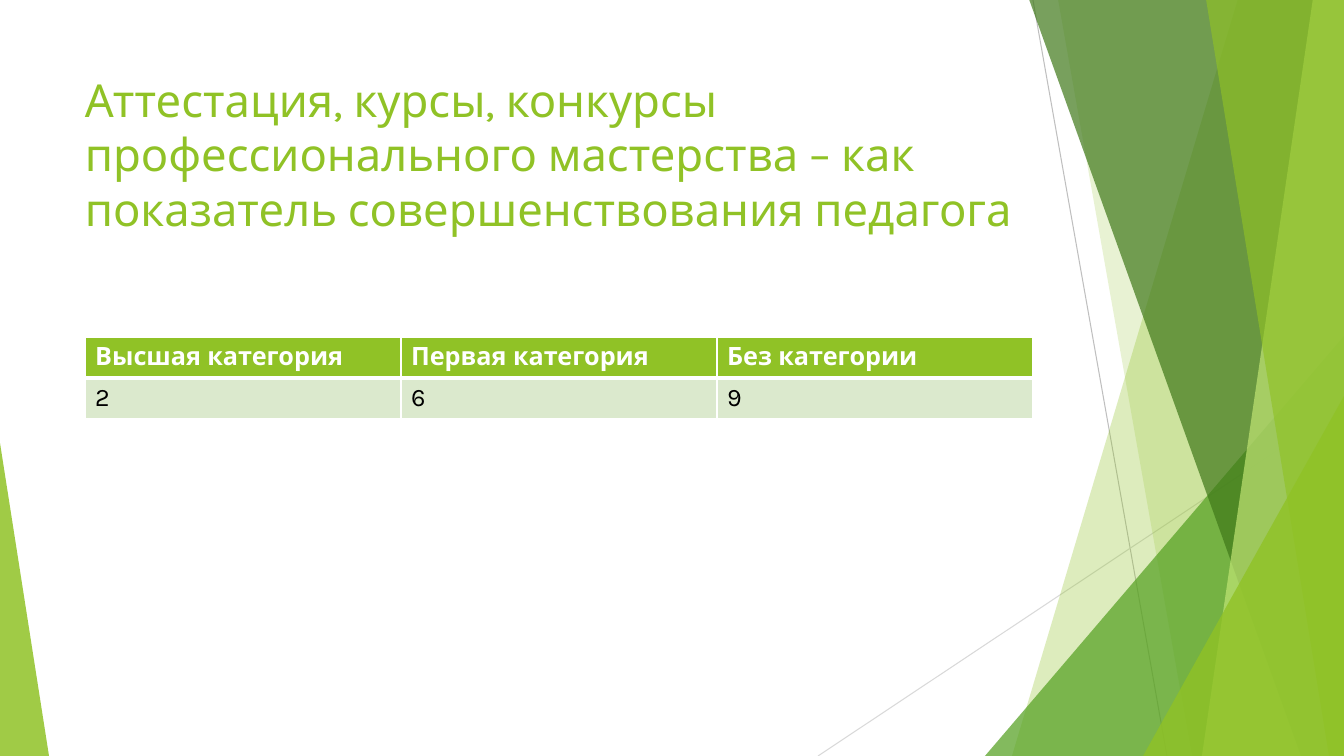
from lxml import etree
from pptx import Presentation
from pptx.dml.color import RGBColor
from pptx.enum.shapes import MSO_CONNECTOR, MSO_SHAPE
from pptx.enum.text import MSO_ANCHOR
from pptx.oxml.ns import qn
from pptx.util import Pt

PX = 9525 / 1.05  # 100.8 px to the inch
WIDTH, HEIGHT = 1344, 756
FONT = "Karla"
TRIANGLE = MSO_SHAPE.ISOSCELES_TRIANGLE
STRAIGHT = MSO_CONNECTOR.STRAIGHT
TOP, MIDDLE = MSO_ANCHOR.TOP, MSO_ANCHOR.MIDDLE
COLORS = {
    "lime": "90C226", "green": "54A021", "forest": "3F7819", "pale": "C0E474",
    "mint": "DBE9CD", "white": "FFFFFF", "black": "000000",
    "gray": "BFBFBF", "silver": "D9D9D9",
}


def emu(*lengths):
    return [round(length * PX) for length in lengths]


def style_run(run, size, color, bold=False):
    run.font.name = FONT
    run.font.size = Pt(size)
    run.font.bold = bold
    run.font.color.rgb = RGBColor.from_string(COLORS[color])


deck = Presentation()
deck.slide_width, deck.slide_height = emu(WIDTH, HEIGHT)
page = deck.slides.add_slide(deck.slide_layouts[6])
shapes = page.shapes

# Thin crossing lines
for x1, y1, x2, y2, color in [
    (1033, 0, 1167, HEIGHT, "gray"),
    (WIDTH, 406, 818, HEIGHT, "silver"),
]:
    line = shapes.add_connector(STRAIGHT, *emu(x1, y1, x2, y2))
    line.line.color.rgb = RGBColor.from_string(COLORS[color])
    line.line.width = Pt(0.75)
    etree.SubElement(line._element.spPr, qn("a:effectLst"))

# Translucent facets: bands (top x, bottom x) reach the right edge,
# triangles are (left, top, width, apex) and stand on the bottom edge
facets = [
    ((1238, 1012), "lime", 30),
    ((1058, 1192), "lime", 20),
    ((985, 336, 359, 1), "green", 72),
    ((1029, 1301), "forest", 70),
    ((1313, 1202), "pale", 70),
    ((1206, 1329), "lime", 65),
    ((1143, 396, 201, 1), "lime", 80),
    ((0, 443, 49, 0), "lime", 85),
]
for geometry, color, opacity in facets:
    if len(geometry) == 2:
        top_x, bottom_x = geometry
        outline = shapes.build_freeform(top_x, -1, scale=PX)
        outline.add_line_segments([(WIDTH, -1), (WIDTH, HEIGHT), (bottom_x, HEIGHT)])
        facet = outline.convert_to_shape()
    else:
        left, top, width, apex = geometry
        facet = shapes.add_shape(TRIANGLE, *emu(left, top, width, HEIGHT - top))
        facet.adjustments[0] = apex
    facet.shadow.inherit = False
    facet.line.fill.background()
    facet.fill.solid()
    facet.fill.fore_color.rgb = RGBColor.from_string(COLORS[color])
    tint = facet._element.spPr.find(f"{qn('a:solidFill')}/{qn('a:srgbClr')}")
    etree.SubElement(tint, qn("a:alpha"), val=str(opacity * 1000))

# Title
title = shapes.add_textbox(*emu(75, 67, 948, 146))
title.text_frame.word_wrap = True
title.text_frame.vertical_anchor = TOP
title.text_frame.text = (
    "Аттестация, курсы, конкурсы профессионального мастерства – как "
    "показатель совершенствования педагога"
)
style_run(title.text_frame.paragraphs[0].runs[0], 32.4, "lime")

# Table of qualification categories
rows = [
    (["Высшая категория", "Первая категория", "Без категории"], "lime", "white", True),
    (["2", "6", "9"], "mint", "black", False),
]
table = shapes.add_table(2, 3, *emu(85, 337, 948, 82)).table
for row_index, (texts, fill, color, bold) in enumerate(rows):
    borders = {"L": 1, "R": 1, "T": 1 if bold else 3, "B": 3 if bold else 1}
    for column_index, text in enumerate(texts):
        cell = table.cell(row_index, column_index)
        cell.text = text
        cell.vertical_anchor = TOP
        style_run(cell.text_frame.paragraphs[0].runs[0], 18, color, bold)
        properties = cell._tc.get_or_add_tcPr()
        for side, points in borders.items():
            border = etree.SubElement(properties, qn(f"a:ln{side}"), w=str(Pt(points)))
            paint = etree.SubElement(border, qn("a:solidFill"))
            etree.SubElement(paint, qn("a:srgbClr"), val=COLORS["white"])
        cell.fill.solid()
        cell.fill.fore_color.rgb = RGBColor.from_string(COLORS[fill])

deck.save("out.pptx")
